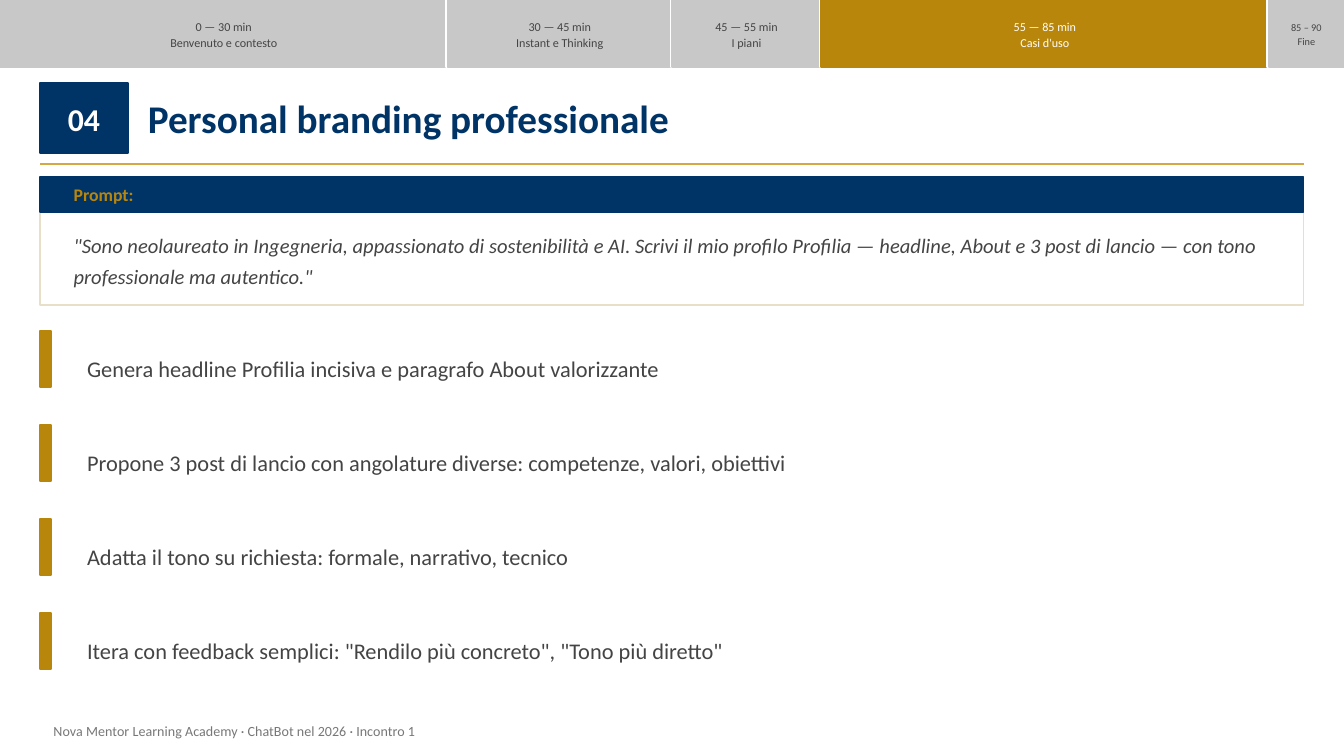
"""Build the "Personal branding professionale" slide with its session timeline."""
from lxml.etree import SubElement
from pptx import Presentation
from pptx.dml.color import RGBColor
from pptx.enum.shapes import MSO_CONNECTOR as CONN, MSO_SHAPE as SHAPE
from pptx.enum.text import MSO_ANCHOR as ANCHOR, PP_ALIGN as ALIGN
from pptx.oxml.ns import qn
from pptx.util import Pt

PX = 9144
W = 1000
MARGIN, CONTENT_W = 30, 940
NAVY = RGBColor(0x00, 0x33, 0x66)
GOLD = RGBColor(0xB8, 0x86, 0x0B)
LIGHT_GOLD = RGBColor(0xD4, 0xA8, 0x43)
CREAM = RGBColor(0xE8, 0xDF, 0xC8)
SILVER = RGBColor(0xC8, 0xC8, 0xC8)
GREY = RGBColor(0x77, 0x77, 0x77)
DARK = RGBColor(0x44, 0x44, 0x44)
WHITE = RGBColor(0xFF, 0xFF, 0xFF)

prs = Presentation()
prs.slide_width = W * PX
prs.slide_height = W * PX * 9 // 16
s = prs.slides.add_slide(prs.slide_layouts[6])


def add_rect(x, y, w, h, fill, line=None):
    sp = s.shapes.add_shape(SHAPE.RECTANGLE, x * PX, y * PX, w * PX, h * PX)
    sp.shadow.inherit = False
    sp.fill.solid()
    sp.fill.fore_color.rgb = fill
    sp.line.color.rgb = line or fill
    sp.line.width = Pt(1)


def add_text(x, y, w, h, lines, size, color, bold=False, italic=False,
             align=ALIGN.LEFT, spacing=None):
    tf = s.shapes.add_textbox(x * PX, y * PX, w * PX, h * PX).text_frame
    tf.word_wrap = True
    tf.vertical_anchor = ANCHOR.MIDDLE
    for i, line in enumerate(lines):
        p = tf.add_paragraph() if i else tf.paragraphs[0]
        p.alignment = align
        p.line_spacing = spacing
        r = p.add_run()
        r.text = line
        r.font.name = "Calibri"
        r.font.size = Pt(size)
        r.font.bold = bold
        r.font.italic = italic
        r.font.color.rgb = color
    return tf


add_text(MARGIN, 533, CONTENT_W, 22,
         ["Nova Mentor Learning Academy · ChatBot nel 2026 · Incontro 1"], 7.5, GREY)

add_rect(MARGIN, 62, 65, 52, NAVY)
add_text(MARGIN, 62, 65, 52, ["04"], 17, WHITE, bold=True, align=ALIGN.CENTER)
title = add_text(110, 64, 650, 48, ["Personal branding professionale"], 21, NAVY, bold=True)
title.margin_left = title.margin_right = title.margin_top = title.margin_bottom = 0

rule = s.shapes.add_connector(CONN.STRAIGHT, MARGIN * PX, 122 * PX,
                              (MARGIN + CONTENT_W) * PX, 122 * PX)
rule.line.color.rgb = LIGHT_GOLD
rule.line.width = Pt(1)
SubElement(rule._element.spPr, qn("a:effectLst"))

add_rect(MARGIN, 132, CONTENT_W, 95, WHITE, CREAM)
add_rect(MARGIN, 132, CONTENT_W, 26, NAVY)
add_text(45, 132, 910, 26, ["Prompt:"], 9.5, GOLD, bold=True)
prompt = ('"Sono neolaureato in Ingegneria, appassionato di sostenibilità e AI. '
          'Scrivi il mio profilo Profilia — headline, About e 3 post di lancio — '
          'con tono professionale ma autentico."')
add_text(45, 159, 910, 65, [prompt], 11, DARK, italic=True, spacing=1.25)

benefits = [
    "Genera headline Profilia incisiva e paragrafo About valorizzante",
    "Propone 3 post di lancio con angolature diverse: competenze, valori, obiettivi",
    "Adatta il tono su richiesta: formale, narrativo, tecnico",
    'Itera con feedback semplici: "Rendilo più concreto", "Tono più diretto"',
]
for i, benefit in enumerate(benefits):
    y = 240 + 70 * i
    add_rect(MARGIN, y + 6, 8, 42, GOLD)
    add_text(55, y, 910, 62, [benefit], 12, DARK, spacing=1.3)

TOTAL_MIN = 90
sessions = [
    (0, 30, "0 — 30 min", "Benvenuto e contesto"),
    (30, 45, "30 — 45 min", "Instant e Thinking"),
    (45, 55, "45 — 55 min", "I piani"),
    (55, 85, "55 — 85 min", "Casi d'uso"),
    (85, 90, "85 – 90", "Fine"),
]
current = 3
for i, (start, end, time, topic) in enumerate(sessions):
    left, right = round(W * start / TOTAL_MIN), round(W * end / TOTAL_MIN)
    last = end == TOTAL_MIN
    add_rect(left, 0, right - left, 50, GOLD if i == current else SILVER)
    if not last:
        add_rect(right - 1, 0, 2, 50, WHITE)
    add_text(left + 4, 2, right - left - 8, 46, [time, topic], 5.5 if last else 6.5,
             WHITE if i == current else DARK, align=ALIGN.CENTER, spacing=1.1)

prs.save("out.pptx")
